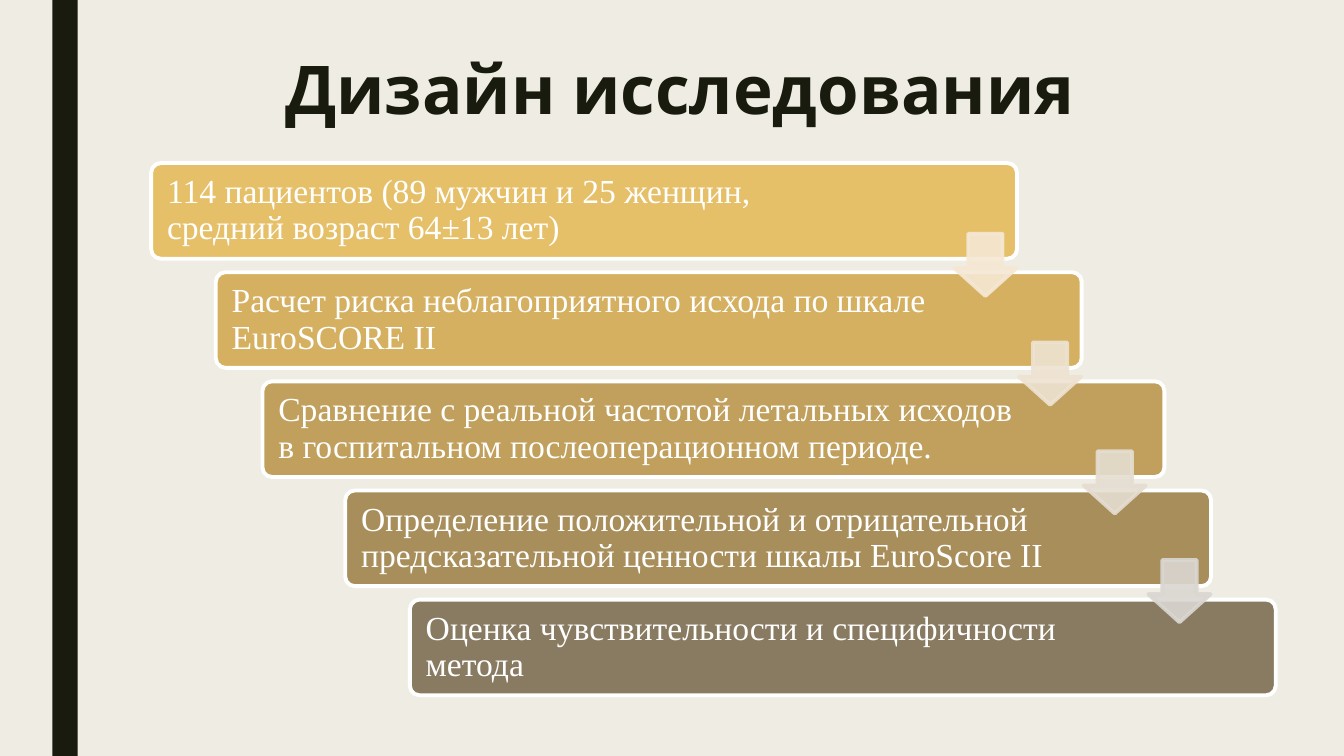
"""Builds the study design slide: a staircase of five steps joined by arrows."""
from dataclasses import dataclass

import pptx
import pptx.dml.color
import pptx.enum.shapes
import pptx.enum.text
import pptx.oxml
import pptx.oxml.ns
import pptx.util
from pptx.util import Cm

SHAPES = pptx.enum.shapes.MSO_SHAPE
ALIGN = pptx.enum.text.PP_ALIGN
ANCHOR = pptx.enum.text.MSO_ANCHOR


@dataclass(frozen=True)
class Theme:
    """Colours, fonts and type sizes of the slide."""
    background: str = "EFEDE3"
    dark: str = "191B0E"
    light: str = "FFFFFF"
    title_font: str = "Karla"
    body_font: str = "Times New Roman"
    title_size: int = 48
    body_size: int = 24
    outline: float = 2.75
    arrow_opacity: int = 90


THEME = Theme()

STEPS = [
    ("114 пациентов (89 мужчин и 25 женщин, средний возраст 64±13 лет)", "E6C069", 21.82),
    ("Расчет риска неблагоприятного исхода по шкале EuroSCORE II", "D5B061", 21.82),
    ("Сравнение с реальной частотой летальных исходов в госпитальном "
     "послеоперационном периоде.", "C0A05C", 22.73),
    ("Определение положительной и отрицательной предсказательной ценности "
     "шкалы EuroScore II", "A88E5B", 21.82),
    ("Оценка чувствительности и специфичности метода", "897B61", 21.82),
]
ARROW_COLOURS = ["F5E8D4", "EEE3D2", "E5DDD1", "DAD7D2"]
STEP_RIGHT = 1.63


def rgb(colour):
    """Turn a hex string into a colour."""
    return pptx.dml.color.RGBColor.from_string(colour)


def write_text(box, text, *, font, size, colour, bold=False, align=ALIGN.LEFT,
               anchor=ANCHOR.MIDDLE, spacing=0.9, insets=(0.25, 0.13, 0.25, 0.13)):
    """Put one formatted paragraph into a shape; insets run left, top, right, bottom."""
    frame = box.text_frame
    frame.word_wrap = True
    frame.auto_size = pptx.enum.text.MSO_AUTO_SIZE.NONE
    frame.vertical_anchor = anchor
    (frame.margin_left, frame.margin_top,
     frame.margin_right, frame.margin_bottom) = map(Cm, insets)
    para = frame.paragraphs[0]
    para.alignment = align
    para.line_spacing = spacing
    span = para.add_run()
    span.text = text
    span.font.name = font
    span.font.size = pptx.util.Pt(size)
    span.font.bold = bold
    span.font.color.rgb = rgb(colour)


def add_block(page, kind, left, top, width, height, fill, line=None):
    """Add a flat filled shape, outlined when a line colour is given."""
    block = page.shapes.add_shape(kind, Cm(left), Cm(top), Cm(width), Cm(height))
    block.shadow.inherit = False
    block.fill.solid()
    block.fill.fore_color.rgb = rgb(fill)
    if line:
        block.line.color.rgb = rgb(line)
        block.line.width = pptx.util.Pt(THEME.outline)
    else:
        block.line.fill.background()
    return block


def set_opacity(block, percent):
    """Make the fill and outline of a shape partly transparent."""
    properties = block.fill._xPr
    for colour in properties.iter(pptx.oxml.ns.qn("a:srgbClr")):
        alpha = pptx.oxml.parse_xml(
            f'<a:alpha {pptx.oxml.ns.nsdecls("a")} val="{percent * 1000}"/>')
        colour.append(alpha)


def add_title(page, text):
    """Place and fill the title placeholder."""
    title = page.shapes.title
    title.left, title.top, title.width, title.height = Cm(3.81), Cm(1.32), Cm(26.67), Cm(4.7)
    write_text(title, text, font=THEME.title_font, size=THEME.title_size,
               colour=THEME.dark, bold=True, align=ALIGN.CENTER,
               anchor=ANCHOR.TOP, spacing=0.89)


def add_step(page, index, text, fill, width):
    """Add one stair, centred on its place in the staircase."""
    centre = 14.72 + STEP_RIGHT * index
    step = add_block(page, SHAPES.ROUNDED_RECTANGLE, centre - width / 2,
                     4.11 + 2.75 * index, width, 2.41, fill, THEME.light)
    step.adjustments[0] = 0.1
    write_text(step, text, font=THEME.body_font, size=THEME.body_size,
               colour=THEME.light, insets=(0.33, 0.25, 3.5, 0.25))


def add_arrow(page, index, colour):
    """Add the arrow from one stair to the next."""
    arrow = add_block(page, SHAPES.DOWN_ARROW, 24.05 + STEP_RIGHT * index,
                      5.89 + 2.74 * index, 1.57, 1.57, colour, colour)
    arrow.adjustments[0] = 0.55
    arrow.adjustments[1] = 0.45
    set_opacity(arrow, THEME.arrow_opacity)


def main():
    """Build and save the slide."""
    deck = pptx.Presentation()
    deck.slide_width, deck.slide_height = Cm(33.87), Cm(19.05)
    page = deck.slides.add_slide(deck.slide_layouts.get_by_name("Title Only"))
    page.background.fill.solid()
    page.background.fill.fore_color.rgb = rgb(THEME.background)
    add_block(page, SHAPES.RECTANGLE, 1.32, 0, 0.64, 19.05, THEME.dark)
    add_title(page, "Дизайн исследования")
    for index, (text, fill, width) in enumerate(STEPS):
        add_step(page, index, text, fill, width)
    for index, colour in enumerate(ARROW_COLOURS):
        add_arrow(page, index, colour)
    deck.save("out.pptx")


if __name__ == "__main__":
    main()
